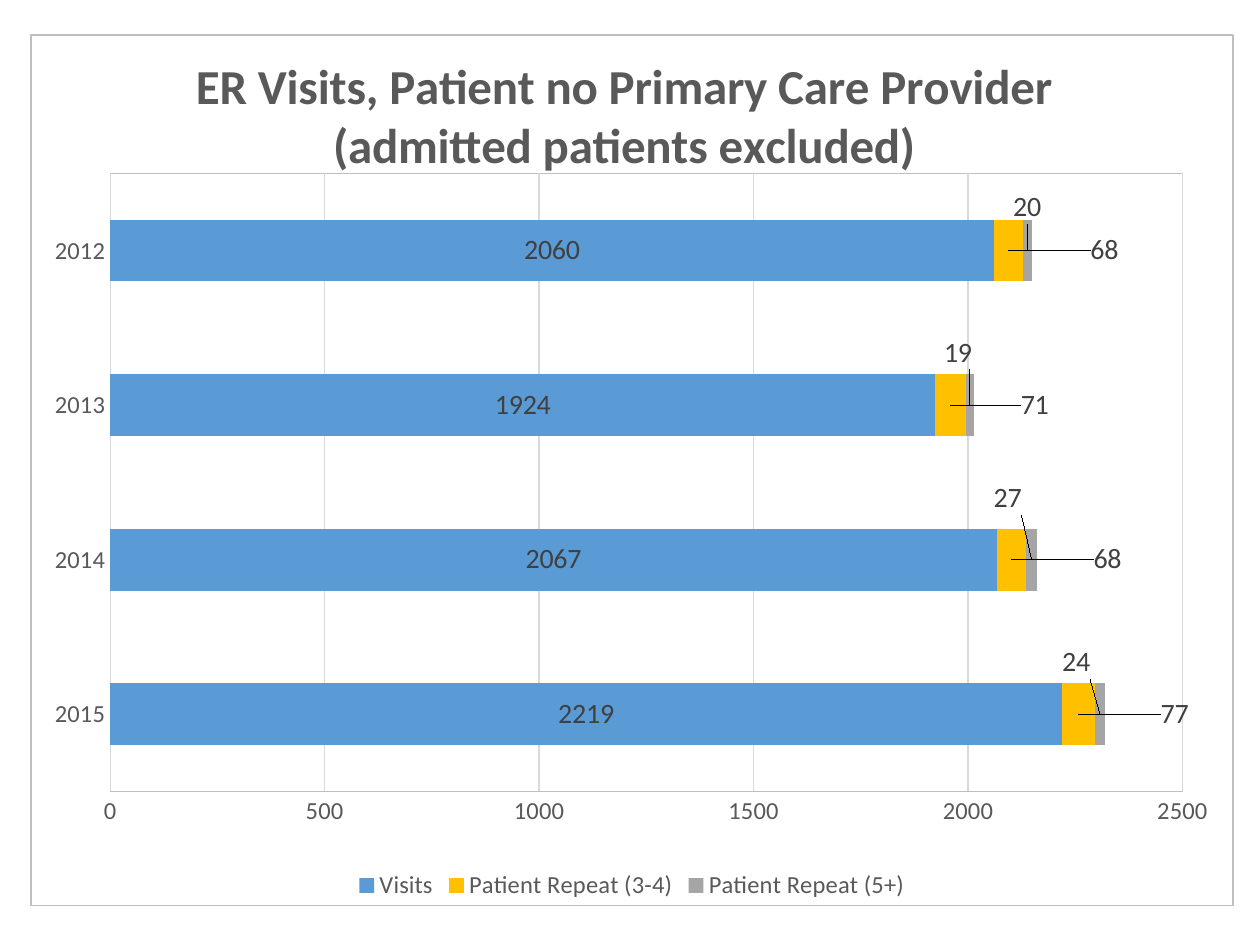
import pptx
import pptx.chart.data
import pptx.dml.color
import pptx.enum.chart
import pptx.oxml
import pptx.oxml.ns
import pptx.util

RGBColor = pptx.dml.color.RGBColor
Cm = pptx.util.Cm
Pt = pptx.util.Pt
qn = pptx.oxml.ns.qn

BLACK = RGBColor(0x00, 0x00, 0x00)
TEXT_GREY = RGBColor(0x59, 0x59, 0x59)
LABEL_GREY = RGBColor(0x40, 0x40, 0x40)
BORDER_GREY = RGBColor(0xBF, 0xBF, 0xBF)
GRID_GREY = RGBColor(0xD9, 0xD9, 0xD9)
BLUE = RGBColor(0x5B, 0x9B, 0xD5)
YELLOW = RGBColor(0xFF, 0xC0, 0x00)
GREY = RGBColor(0xA5, 0xA5, 0xA5)

YEARS = ["2015", "2014", "2013", "2012"]
# name, values, colour, label offsets as shares of the chart's width and height
SERIES = [
    ("Visits", [2219, 2067, 1924, 2060], BLUE, []),
    ("Patient Repeat (3-4)", [77, 68, 71, 68], YELLOW,
     [(0.08, 0), (0.08, 0), (0.07, 0), (0.08, 0)]),
    ("Patient Repeat (5+)", [24, 27, 19, 20], GREY,
     [(-0.02, -0.06), (-0.02, -0.07), (-0.01, -0.06), (0, -0.05)]),
]


def layout_xml(**settings):
    """Manual chart layout; settings are written in the order given."""
    parts = "".join(f'<c:{key} val="{value}"/>' for key, value in settings.items())
    return pptx.oxml.parse_xml(
        f'<c:layout {pptx.oxml.ns.nsdecls("c")}><c:manualLayout>{parts}'
        "</c:manualLayout></c:layout>")


def outline_xml(color):
    return pptx.oxml.parse_xml(
        f'<c:spPr {pptx.oxml.ns.nsdecls("c", "a")}><a:noFill/><a:ln w="9525">'
        f'<a:solidFill><a:srgbClr val="{color}"/></a:solidFill></a:ln></c:spPr>')


class ChartSlide:
    font_name = "Calibri"
    line_width = Pt(0.75)

    def __init__(self, slide):
        self.slide = slide

    def style_font(self, font, size, color, bold=False):
        font.name = self.font_name
        font.size = Pt(size)
        font.bold = bold
        font.color.rgb = color

    def style_line(self, line, color):
        line.width = self.line_width
        line.color.rgb = color

    def add_stacked_bars(self, left, top, width, height):
        data = pptx.chart.data.CategoryChartData()
        data.categories = YEARS
        for name, values, _, _ in SERIES:
            data.add_series(name, values)
        chart = self.slide.shapes.add_chart(
            pptx.enum.chart.XL_CHART_TYPE.BAR_STACKED,
            left, top, width, height, data).chart
        self.style_font(chart.font, 10, BLACK)
        bars = chart.plots[0]
        bars.gap_width = 150
        bars.overlap = 100
        bars.vary_by_categories = False
        for series, (_, _, color, offsets) in zip(bars.series, SERIES):
            series.format.fill.solid()
            series.format.fill.fore_color.rgb = color
            self.add_labels(series, offsets)
        return chart

    def add_labels(self, series, offsets):
        center = pptx.enum.chart.XL_LABEL_POSITION.CENTER
        labels = series.data_labels
        labels.show_value = True
        labels.position = center
        self.style_font(labels.font, 16, LABEL_GREY)
        for index in range(len(offsets)):
            label = series.points[index].data_label
            self.style_font(label.font, 16, LABEL_GREY)
            label.position = center
        label_elements = series._element.iter(qn("c:dLbl"))
        for element, (x, y) in zip(list(label_elements), offsets):
            element.find(qn("c:idx")).addnext(layout_xml(x=x, y=y))

    def add_title(self, chart, text):
        frame = chart.chart_title.text_frame
        run = frame.paragraphs[0].add_run()
        run.text = text
        self.style_font(run.font, 28, TEXT_GREY, bold=True)
        title = chart.chart_title._element
        for old in title.findall(qn("c:layout")):
            title.remove(old)
        title.find(qn("c:tx")).addnext(
            layout_xml(xMode="edge", yMode="edge", x=0.13, y=0.01))
        chart.chart_title.include_in_layout = False

    def format_axes(self, chart):
        none = pptx.enum.chart.XL_TICK_MARK.NONE
        years, visits = chart.category_axis, chart.value_axis
        for axis in (years, visits):
            axis.major_tick_mark = none
            axis.minor_tick_mark = none
            self.style_font(axis.tick_labels.font, 14, TEXT_GREY)
        years.has_major_gridlines = False
        self.style_line(years.format.line, GRID_GREY)
        visits.minimum_scale = 0
        visits.maximum_scale = 2500
        visits.major_unit = 500
        visits.format.line.fill.background()
        visits.has_major_gridlines = True
        self.style_line(visits.major_gridlines.format.line, GRID_GREY)

    def add_legend(self, chart):
        chart.has_legend = True
        chart.legend.position = pptx.enum.chart.XL_LEGEND_POSITION.BOTTOM
        chart.legend.include_in_layout = False
        self.style_font(chart.legend.font, 14, TEXT_GREY)

    def frame_chart(self, chart):
        """Places the plot area and outlines both it and the whole chart."""
        chart_element = chart._chartSpace.find(qn("c:chart"))
        chart_element.addnext(outline_xml(BORDER_GREY))
        plot_area = chart_element.find(qn("c:plotArea"))
        for old in plot_area.findall(qn("c:layout")):
            plot_area.remove(old)
        plot_area.insert(0, layout_xml(
            layoutTarget="inner", xMode="edge", yMode="edge",
            x=0.066, y=0.159, w=0.892, h=0.71))
        plot_area.append(outline_xml(BORDER_GREY))


def main():
    deck = pptx.Presentation()
    deck.slide_width, deck.slide_height = Cm(25.4), Cm(19.05)
    blank = deck.slide_layouts[6]
    page = ChartSlide(deck.slides.add_slide(blank))
    visits_chart = page.add_stacked_bars(Cm(0.61), Cm(0.69), Cm(24.26), Cm(17.58))
    page.add_title(visits_chart, "ER Visits, Patient no Primary Care Provider "
                                 "(admitted patients excluded)")
    page.format_axes(visits_chart)
    page.add_legend(visits_chart)
    page.frame_chart(visits_chart)
    deck.save("out.pptx")


if __name__ == "__main__":
    main()
